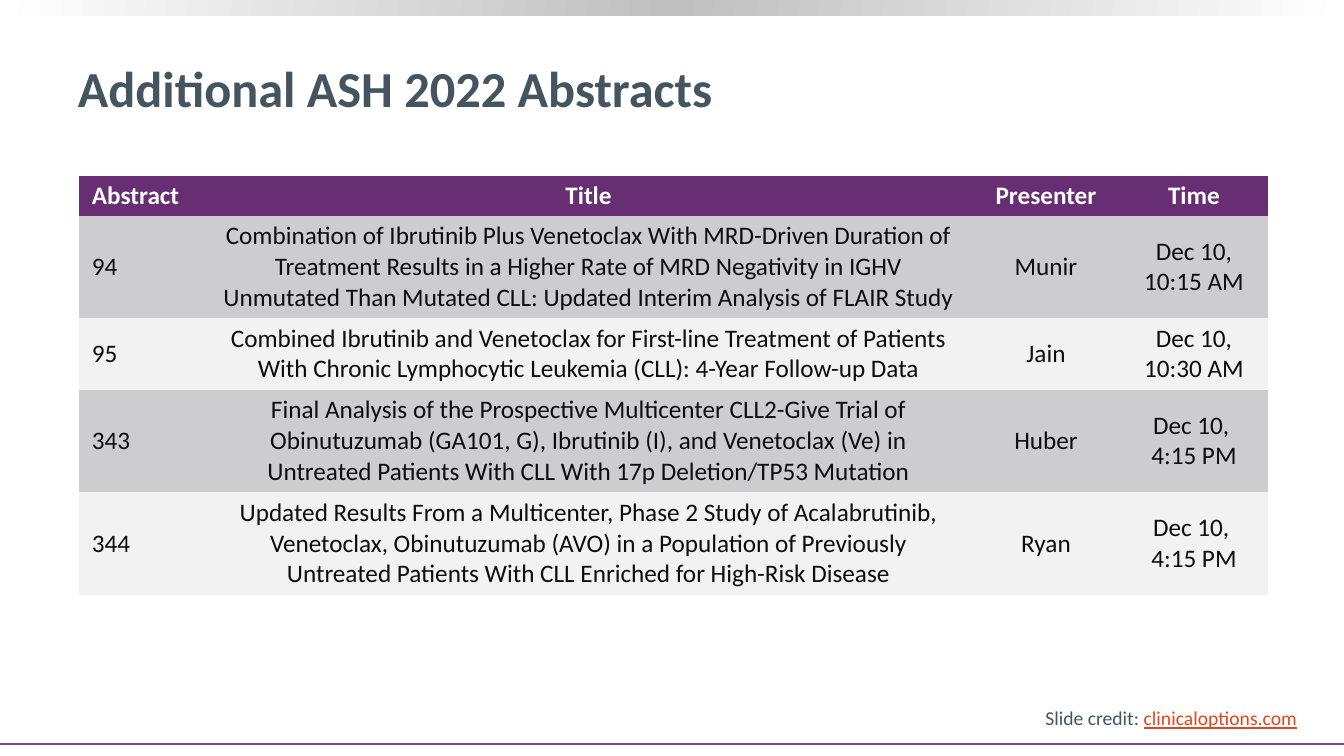
from copy import deepcopy

from pptx import Presentation
from pptx.dml.color import RGBColor
from pptx.enum.shapes import MSO_CONNECTOR, MSO_SHAPE
from pptx.enum.text import MSO_ANCHOR, PP_ALIGN
from pptx.oxml.ns import qn
from pptx.util import Pt
from lxml import etree

EMU_PER_PX = 12192000 / 1344
SLIDE_WIDTH, SLIDE_HEIGHT = 1344, 756
FONT = "Calibri"
NO_GRID_STYLE = "{2D5ABB26-0587-4C30-8999-92F81FD0307C}"

RECTANGLE = MSO_SHAPE.RECTANGLE
STRAIGHT = MSO_CONNECTOR.STRAIGHT
MIDDLE = MSO_ANCHOR.MIDDLE
LEFT, CENTER, RIGHT = PP_ALIGN.LEFT, PP_ALIGN.CENTER, PP_ALIGN.RIGHT

WHITE = RGBColor(0xFF, 0xFF, 0xFF)
SILVER = RGBColor(0xBF, 0xBF, 0xBF)
SLATE = RGBColor(0x45, 0x55, 0x60)
ORANGE = RGBColor(0xE1, 0x47, 0x1D)
VIOLET = RGBColor(0x7F, 0x3F, 0x98)
PURPLE = RGBColor(0x68, 0x2E, 0x74)
INK = RGBColor(0x0D, 0x0D, 0x0D)
BAND_DARK = RGBColor(0xCD, 0xCD, 0xCF)
BAND_LIGHT = RGBColor(0xF2, 0xF2, 0xF2)

COLUMN_WIDTHS = [126, 767, 148, 148]
ROW_HEIGHTS = [40, 102, 72, 102, 103]
ABSTRACTS = [
    ["Abstract", "Title", "Presenter", "Time"],
    ["94", "Combination of Ibrutinib Plus Venetoclax With MRD-Driven Duration of "
     "Treatment Results in a Higher Rate of MRD Negativity in IGHV Unmutated Than "
     "Mutated CLL: Updated Interim Analysis of FLAIR Study", "Munir", "Dec 10, 10:15 AM"],
    ["95", "Combined Ibrutinib and Venetoclax for First-line Treatment of Patients "
     "With Chronic Lymphocytic Leukemia (CLL): 4-Year Follow-up Data",
     "Jain", "Dec 10, 10:30 AM"],
    ["343", "Final Analysis of the Prospective Multicenter CLL2-Give Trial of "
     "Obinutuzumab (GA101, G), Ibrutinib (I), and Venetoclax (Ve) in Untreated "
     "Patients With CLL With 17p Deletion/TP53 Mutation", "Huber", "Dec 10, \n4:15 PM"],
    ["344", "Updated Results From a Multicenter, Phase 2 Study of Acalabrutinib, "
     "Venetoclax, Obinutuzumab (AVO) in a Population of Previously Untreated "
     "Patients With CLL Enriched for High-Risk Disease", "Ryan", "Dec 10, \n4:15 PM"],
]


def px(length):
    """Turn a length in px into EMU."""
    return round(length * EMU_PER_PX)


def set_attributes(target, values):
    """Set each named attribute on the target."""
    for name, value in values.items():
        setattr(target, name, value)


def format_font(font, size, color, **values):
    """Give a font its face, size, colour and any further attributes."""
    set_attributes(font, {"name": FONT, "size": Pt(size), **values})
    font.color.rgb = color


def add_gradient_band(slide, left, top, width, height):
    """Draw the white-silver-white band in the given box."""
    shape = slide.shapes.add_shape(RECTANGLE, px(left), px(top), px(width), px(height))
    shape.shadow.inherit = False
    shape.line.fill.background()
    shape.fill.gradient()
    shape.fill.gradient_angle = 170
    stop_list = next(shape._element.iter(qn("a:gsLst")))
    stop_list.insert(1, deepcopy(stop_list[0]))
    stops = zip(shape.fill.gradient_stops, (0, 0.5, 1), (WHITE, SILVER, WHITE))
    for stop, position, color in stops:
        stop.position = position
        stop.color.rgb = color


def add_bottom_rule(slide, left, top, width):
    """Draw the violet rule along the foot of the slide."""
    rule = slide.shapes.add_connector(STRAIGHT, px(left), px(top), px(left + width), px(top))
    rule.line.color.rgb = VIOLET
    rule.line.width = Pt(1.5)
    etree.SubElement(rule._element.spPr, qn("a:effectLst"))


def add_text(slide, left, top, width, height, runs, alignment=LEFT):
    """Place one paragraph of (text, size, colour, font values) runs in the box."""
    box = slide.shapes.add_textbox(px(left), px(top), px(width), px(height))
    set_attributes(box.text_frame, {"word_wrap": True, "vertical_anchor": MIDDLE})
    paragraph = box.text_frame.paragraphs[0]
    paragraph.alignment = alignment
    for text, size, color, values in runs:
        run = paragraph.add_run()
        run.text = text
        format_font(run.font, size, color, **values)


def format_cell(cell, text, fill, color, alignment, header):
    """Fill one table cell and set its text."""
    set_attributes(cell, {
        "vertical_anchor": MIDDLE,
        "margin_left": px(13), "margin_right": px(13),
        "margin_top": px(5), "margin_bottom": px(5),
    })
    cell.fill.solid()
    cell.fill.fore_color.rgb = fill
    cell.text = text.replace("\n", "\v")
    paragraph = cell.text_frame.paragraphs[0]
    set_attributes(paragraph, {"alignment": alignment, "line_spacing": 0.95 if header else 1.0})
    for run in paragraph.runs:
        format_font(run.font, 18, color, bold=header)


def add_abstract_table(slide, left, top):
    """Place the abstract table with its top left corner at the given point."""
    frame = slide.shapes.add_table(
        len(ROW_HEIGHTS), len(COLUMN_WIDTHS), px(left), px(top),
        px(sum(COLUMN_WIDTHS)), px(sum(ROW_HEIGHTS)))
    table = frame.table
    next(frame._element.iter(qn("a:tableStyleId"))).text = NO_GRID_STYLE
    table.horz_banding = False
    for column, width in zip(table.columns, COLUMN_WIDTHS):
        column.width = px(width)
    for row_index, (height, texts) in enumerate(zip(ROW_HEIGHTS, ABSTRACTS)):
        table.rows[row_index].height = px(height)
        header = row_index == 0
        band = BAND_DARK if row_index % 2 else BAND_LIGHT
        fill, color = (PURPLE, WHITE) if header else (band, INK)
        for column_index, text in enumerate(texts):
            alignment = CENTER if column_index else LEFT
            format_cell(table.cell(row_index, column_index), text, fill, color,
                        alignment, header)


def add_abstracts_slide(presentation):
    """Build the slide that lists the additional abstracts."""
    slide = presentation.slides.add_slide(presentation.slide_layouts[6])
    add_gradient_band(slide, 0, 0, SLIDE_WIDTH, 16)
    add_bottom_rule(slide, 0, 744, SLIDE_WIDTH)
    add_text(slide, 1025, 701, 282, 34, [
        ("Slide credit: ", 14, SLATE, {}),
        ("clinicaloptions.com", 14, ORANGE, {"underline": True}),
    ], RIGHT)
    add_text(slide, 68, 26, 1199, 122,
             [("Additional ASH 2022 Abstracts", 36, SLATE, {"bold": True})])
    add_abstract_table(slide, 79, 176)


def main():
    """Create the presentation and save it."""
    presentation = Presentation()
    set_attributes(presentation, {
        "slide_width": px(SLIDE_WIDTH), "slide_height": px(SLIDE_HEIGHT)})
    add_abstracts_slide(presentation)
    presentation.save("out.pptx")


if __name__ == "__main__":
    main()
